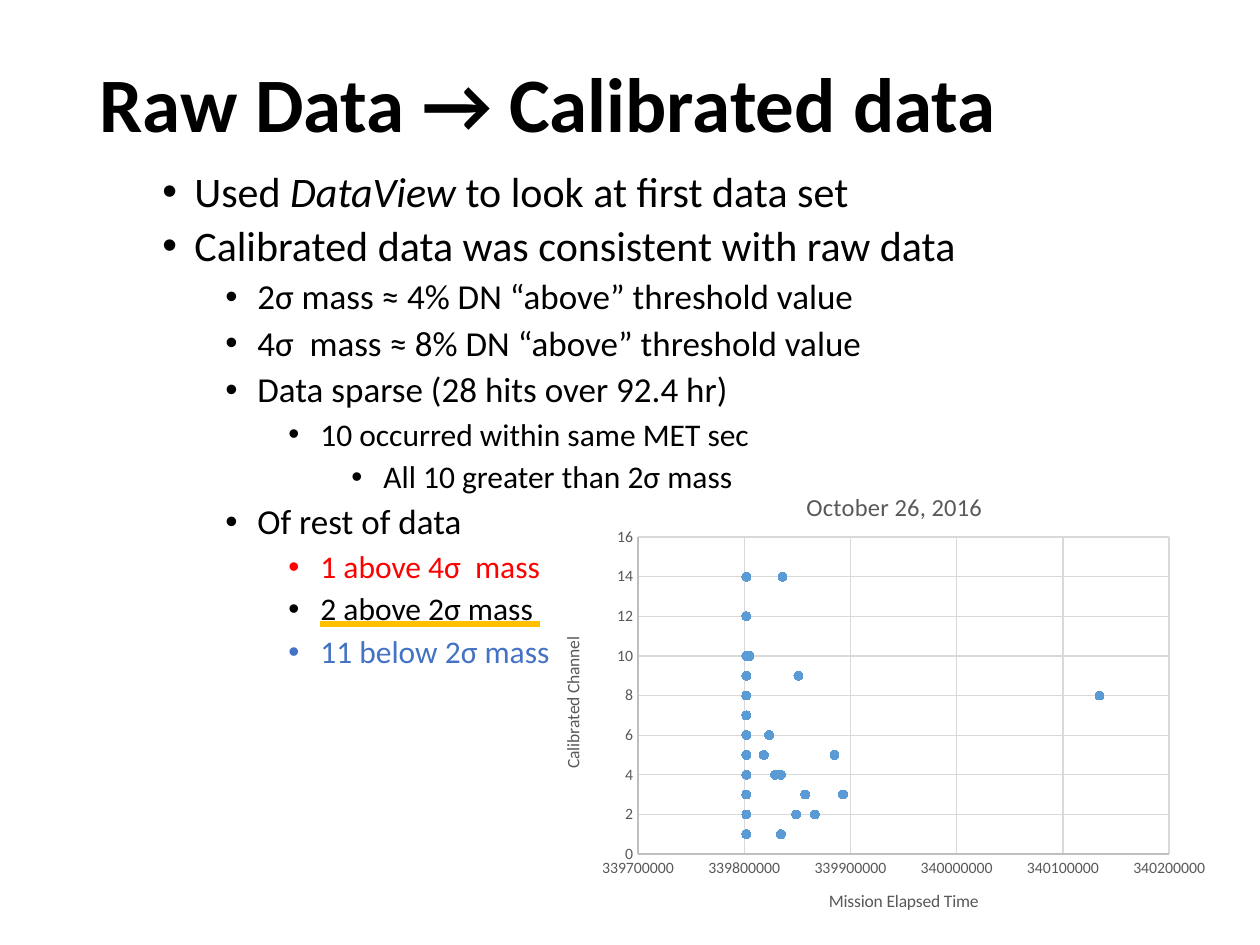
from lxml.etree import SubElement
from pptx import Presentation
from pptx.chart.data import XyChartData
from pptx.dml.color import RGBColor
from pptx.enum.chart import XL_CHART_TYPE as ChartType, XL_MARKER_STYLE as Marker, XL_TICK_MARK as Tick
from pptx.enum.text import MSO_ANCHOR as Anchor, MSO_AUTO_SIZE as AutoSize, MSO_UNDERLINE as Underline, PP_ALIGN as Align
from pptx.oxml.ns import qn
from pptx.util import Emu, Pt

PX = 914400 / 126
FONT = "Calibri"
COLORS = {
    "text": "000000", "red": "FF0000", "blue": "4472C4", "gold": "FFC000",
    "label": "595959", "axis": "BFBFBF", "grid": "D9D9D9", "hit": "5B9BD5",
}
LEVEL_SIZES = {1: 24, 2: 20, 3: 18, 4: 18}
GOLD_LINE = {"underline": Underline.HEAVY_LINE}
OUTLINE = [
    (1, [("Used ", {}), ("DataView", {"italic": True}), (" to look at first data set", {})], "text"),
    (1, [("Calibrated data was consistent with raw data", {})], "text"),
    (2, [("2σ mass ≈ 4% DN “above” threshold value", {})], "text"),
    (2, [("4σ  mass ≈ 8% DN “above” threshold value", {})], "text"),
    (2, [("Data sparse (28 hits over 92.4 hr)", {})], "text"),
    (3, [("10 occurred within same MET sec", {})], "text"),
    (4, [("All 10 greater than 2σ mass", {})], "text"),
    (2, [("Of rest of data", {})], "text"),
    (3, [("1 above 4σ  mass", {})], "red"),
    (3, [("2 above 2σ mass ", GOLD_LINE)], "text"),
    (3, [("11 below 2σ mass", {})], "blue"),
]
BURST_TIME = 339802000
BURST_CHANNELS = [3, 4, 5, 6, 7, 8, 9, 10, 12, 14, 1, 2, 8, 1]
LATER_HITS = [
    (339805000, 10), (339818500, 5), (339823500, 6), (339829000, 4),
    (339834500, 4), (339834500, 1), (339836000, 14), (339849000, 2),
    (339851000, 9), (339857500, 3), (339866500, 2), (339885000, 5),
    (339893000, 3), (340134500, 8),
]
PLOT_AREA = {"x": 0.12, "y": 0.146, "w": 0.787, "h": 0.679}


def px(length):
    """Turn a length in px into EMU."""
    return Emu(round(length * PX))


def rgb(name):
    """Look up a palette colour."""
    return RGBColor.from_string(COLORS[name])


def apply_format(target, values):
    """Set each attribute named in values."""
    for name, value in values.items():
        setattr(target, name, value)


def style_font(font, size, color, **extra):
    """Give a font its face, size, colour and further attributes."""
    apply_format(font, {"name": FONT, "size": Pt(size), **extra})
    font.color.rgb = rgb(color)


def place(part, left, top, width, height):
    """Move and size a part of the slide."""
    apply_format(part, {"left": px(left), "top": px(top), "width": px(width), "height": px(height)})


def fill_title(title):
    """Write and format the slide title."""
    place(title, 87, 50, 1086, 115)
    frame = title.text_frame
    frame.text = "Raw Data → Calibrated data"
    apply_format(frame, {"vertical_anchor": Anchor.MIDDLE, "auto_size": AutoSize.NONE, "word_wrap": True})
    heading = frame.paragraphs[0]
    apply_format(heading, {"alignment": Align.LEFT, "line_spacing": 0.9})
    style_font(heading.runs[0].font, 44, "text", bold=True)


def add_bullet(paragraph, level):
    """Indent a paragraph by its level and give it a round bullet."""
    properties = paragraph._p.get_or_add_pPr()
    properties.set("marL", str(px(32 + 63 * level)))
    properties.set("indent", str(px(-32)))
    SubElement(properties, qn("a:buFont")).set("typeface", "Arial")
    SubElement(properties, qn("a:buChar")).set("char", "•")


def color_underline(run, color):
    """Give the underline of a run its own colour."""
    properties = run._r.get_or_add_rPr()
    underline_fill = SubElement(properties, qn("a:uFill"))
    solid = SubElement(underline_fill, qn("a:solidFill"))
    SubElement(solid, qn("a:srgbClr")).set("val", COLORS[color])
    properties.find(qn("a:latin")).addprevious(underline_fill)


def add_outline(slide):
    """Add the bulleted findings."""
    frame = slide.shapes.add_textbox(px(87), px(165), px(1086), px(610)).text_frame
    frame.word_wrap = True
    for index, (level, pieces, color) in enumerate(OUTLINE):
        finding = frame.add_paragraph() if index else frame.paragraphs[0]
        add_bullet(finding, level)
        apply_format(finding, {"level": level, "line_spacing": 0.9, "space_before": Pt(5 if index else 0)})
        for words, extra in pieces:
            run = finding.add_run()
            run.text = words
            style_font(run.font, LEVEL_SIZES[level], color, **extra)
            if "underline" in extra:
                color_underline(run, "gold")


def write_heading(owner, words, size):
    """Write the title of a chart or an axis."""
    frame = (owner.chart_title if hasattr(owner, "chart_title") else owner.axis_title).text_frame
    frame.text = words
    style_font(frame.paragraphs[0].runs[0].font, size, "label", bold=False)


def style_line(line, color):
    """Draw a thin line in a palette colour."""
    line.width = Pt(0.75)
    line.color.rgb = rgb(color)


def style_axis(axis, words, low, high, step):
    """Set the scale, lines and labels of an axis."""
    apply_format(axis, {
        "minimum_scale": low, "maximum_scale": high, "major_unit": step,
        "has_major_gridlines": True, "major_tick_mark": Tick.NONE, "minor_tick_mark": Tick.NONE,
    })
    apply_format(axis.tick_labels, {"number_format": "General", "number_format_is_linked": False})
    style_font(axis.tick_labels.font, 9, "label")
    style_line(axis.format.line, "axis")
    style_line(axis.major_gridlines.format.line, "grid")
    write_heading(axis, words, 10)


def fix_plot_area(chart):
    """Place the inner plot area by fractions of the chart."""
    plot_area = chart._chartSpace.chart.plotArea
    for automatic in plot_area.findall(qn("c:layout")):
        plot_area.remove(automatic)
    layout = SubElement(plot_area, qn("c:layout"))
    plot_area.insert(0, layout)
    manual = SubElement(layout, qn("c:manualLayout"))
    settings = {"layoutTarget": "inner", "xMode": "edge", "yMode": "edge", **PLOT_AREA}
    for name, value in settings.items():
        SubElement(manual, qn(f"c:{name}")).set("val", str(value))


def add_hit_chart(slide):
    """Add the scatter chart of hits over time."""
    data = XyChartData()
    hits = data.add_series("Series 1")
    for time, channel in [(BURST_TIME, channel) for channel in BURST_CHANNELS] + LATER_HITS:
        hits.add_data_point(time, channel)
    chart = slide.shapes.add_chart(
        ChartType.XY_SCATTER, px(557), px(469), px(675), px(467), data).chart
    apply_format(chart, {"has_legend": False, "has_title": True})
    style_font(chart.font, 10, "text")
    write_heading(chart, "October 26, 2016", 14)
    chart.chart_title.include_in_layout = False
    style_axis(chart.category_axis, "Mission Elapsed Time", 339700000, 340200000, 100000)
    style_axis(chart.value_axis, "Calibrated Channel", 0, 16, 2)
    plot = chart.plots[0]
    plot.vary_by_categories = False
    series = plot.series[0]
    series.format.line.fill.background()
    apply_format(series.marker, {"style": Marker.CIRCLE, "size": 5})
    series.marker.format.fill.solid()
    series.marker.format.fill.fore_color.rgb = rgb("hit")
    style_line(series.marker.format.line, "hit")
    fix_plot_area(chart)


def main():
    """Build and save the slide."""
    deck = Presentation()
    apply_format(deck, {"slide_width": px(1260), "slide_height": px(945)})
    slide = deck.slides.add_slide(deck.slide_layouts[5])
    fill_title(slide.shapes.title)
    add_outline(slide)
    add_hit_chart(slide)
    deck.save("out.pptx")


if __name__ == "__main__":
    main()
